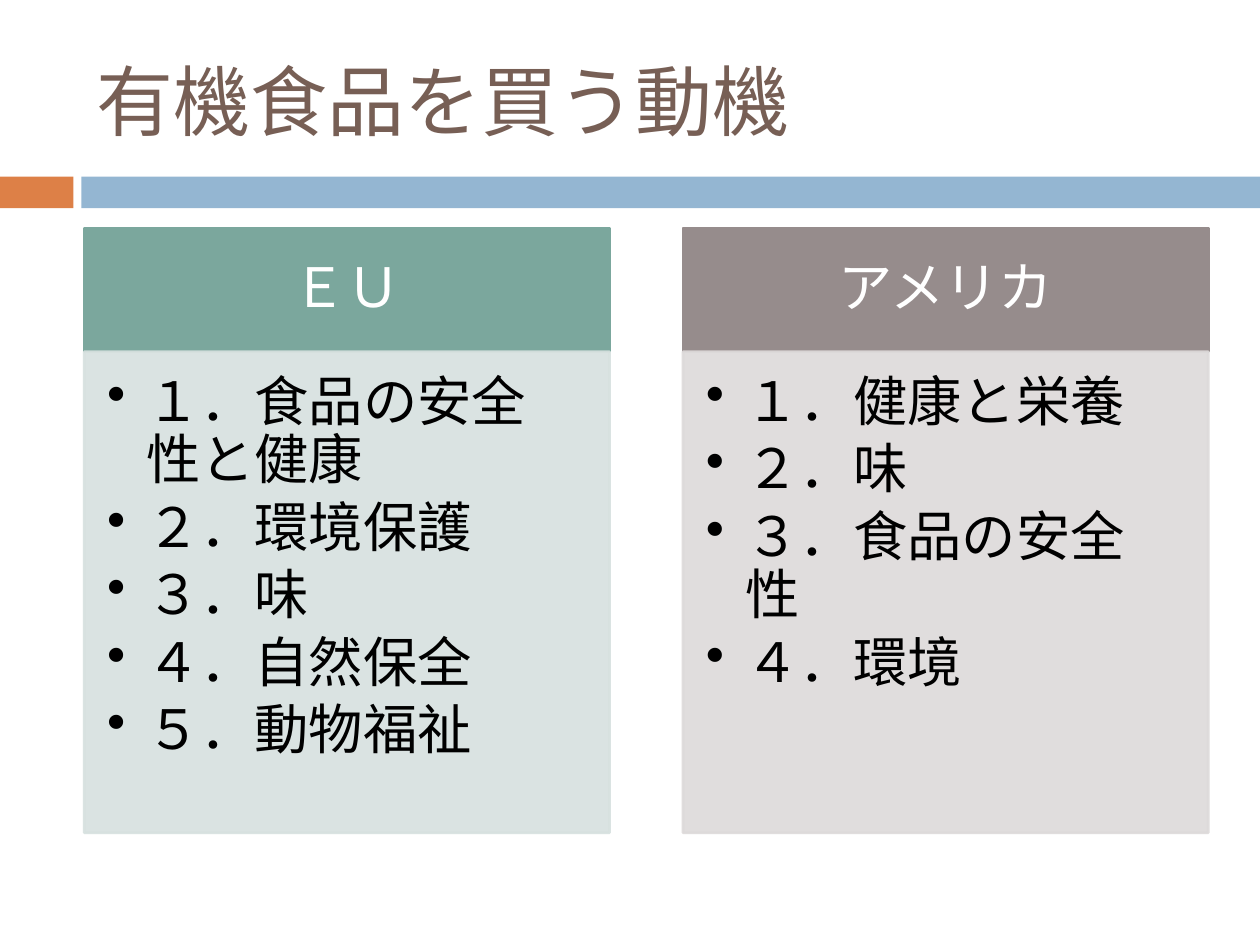
"""Build a slide comparing motives for buying organic food in the EU and America."""
from lxml import etree
from pptx import Presentation
from pptx import util as u
from pptx.dml import color
from pptx.enum import shapes, text
from pptx.oxml import ns


def rgb(value):
    return color.RGBColor.from_string(value)


class Deck:
    font = "Cabin"
    size = 31
    indent = u.Cm(0.79)

    def __init__(self, slide):
        self.slide = slide

    def rect(self, left, top, width, height, fill, outlined=False, opacity=100):
        box = self.slide.shapes.add_shape(
            shapes.MSO_SHAPE.RECTANGLE, *map(u.Cm, (left, top, width, height)))
        box.shadow.inherit = False
        box.fill.solid()
        box.fill.fore_color.rgb = rgb(fill)
        if outlined:
            box.line.color.rgb = rgb(fill)
            box.line.width = u.Pt(1.5)
        else:
            box.line.fill.background()
        if opacity < 100:
            for tint in box._element.spPr.iter(ns.qn("a:srgbClr")):
                etree.SubElement(tint, ns.qn("a:alpha"), val=str(opacity * 1000))
        return box

    def frame(self, box, insets, anchor):
        body = box.text_frame
        body.word_wrap = True
        body.vertical_anchor = anchor
        (body.margin_left, body.margin_top,
         body.margin_right, body.margin_bottom) = map(u.Cm, insets)
        return body

    def add_words(self, paragraph, words, ink, size=size):
        run = paragraph.add_run()
        run.text = words
        run.font.name = self.font
        run.font.size = u.Pt(size)
        run.font.color.rgb = rgb(ink)

    def title(self, words, left, top, width, height):
        box = self.slide.shapes.add_textbox(*map(u.Cm, (left, top, width, height)))
        body = self.frame(box, (0.25, 0.13, 0.25, 0.13), text.MSO_ANCHOR.MIDDLE)
        self.add_words(body.paragraphs[0], words, "775F55", 44)

    def heading(self, words, left, top, width, height, fill):
        box = self.rect(left, top, width, height, fill, outlined=True)
        body = self.frame(box, (0.61, 0.36, 0.61, 0.36), text.MSO_ANCHOR.MIDDLE)
        paragraph = body.paragraphs[0]
        paragraph.alignment = text.PP_ALIGN.CENTER
        paragraph.line_spacing = 0.9
        self.add_words(paragraph, words, "FFFFFF")

    def bullets(self, items, left, top, width, height, fill):
        box = self.rect(left, top, width, height, fill, outlined=True, opacity=90)
        body = self.frame(box, (0.46, 0.46, 0.61, 0.69), text.MSO_ANCHOR.TOP)
        for index, item in enumerate(items):
            paragraph = body.add_paragraph() if index else body.paragraphs[0]
            paragraph.level = 1
            paragraph.alignment = text.PP_ALIGN.LEFT
            paragraph.line_spacing = 0.9
            paragraph.space_after = u.Pt(5)
            props = paragraph._p.get_or_add_pPr()
            props.set("marL", str(self.indent))
            props.set("indent", str(-self.indent))
            etree.SubElement(props, ns.qn("a:buChar"), char="•")
            self.add_words(paragraph, item, "000000")


def main():
    prs = Presentation()
    prs.slide_width, prs.slide_height = u.Cm(25.4), u.Cm(19.05)
    deck = Deck(prs.slides.add_slide(prs.slide_layouts[6]))

    deck.rect(0, 3.56, 1.48, 0.64, "DD8047")
    deck.rect(1.64, 3.56, 23.76, 0.64, "94B6D2")
    deck.title("有機食品を買う動機", 1.69, 0.64, 22.66, 2.74)

    regions = [
        ("ＥＵ", "7BA79D", "D7E1DF",
         ["１．食品の安全性と健康", "２．環境保護", "３．味", "４．自然保全", "５．動物福祉"]),
        ("アメリカ", "968C8C", "DDDADA",
         ["１．健康と栄養", "２．味", "３．食品の安全性", "４．環境"]),
    ]
    top, width, heading_height, list_height, pitch = 4.6, 10.59, 2.49, 9.7, 12.07
    for column, (region, dark, light, motives) in enumerate(regions):
        left = 1.7 + column * pitch
        deck.heading(region, left, top, width, heading_height, dark)
        deck.bullets(motives, left, top + heading_height, width, list_height, light)

    prs.save("out.pptx")


if __name__ == "__main__":
    main()
